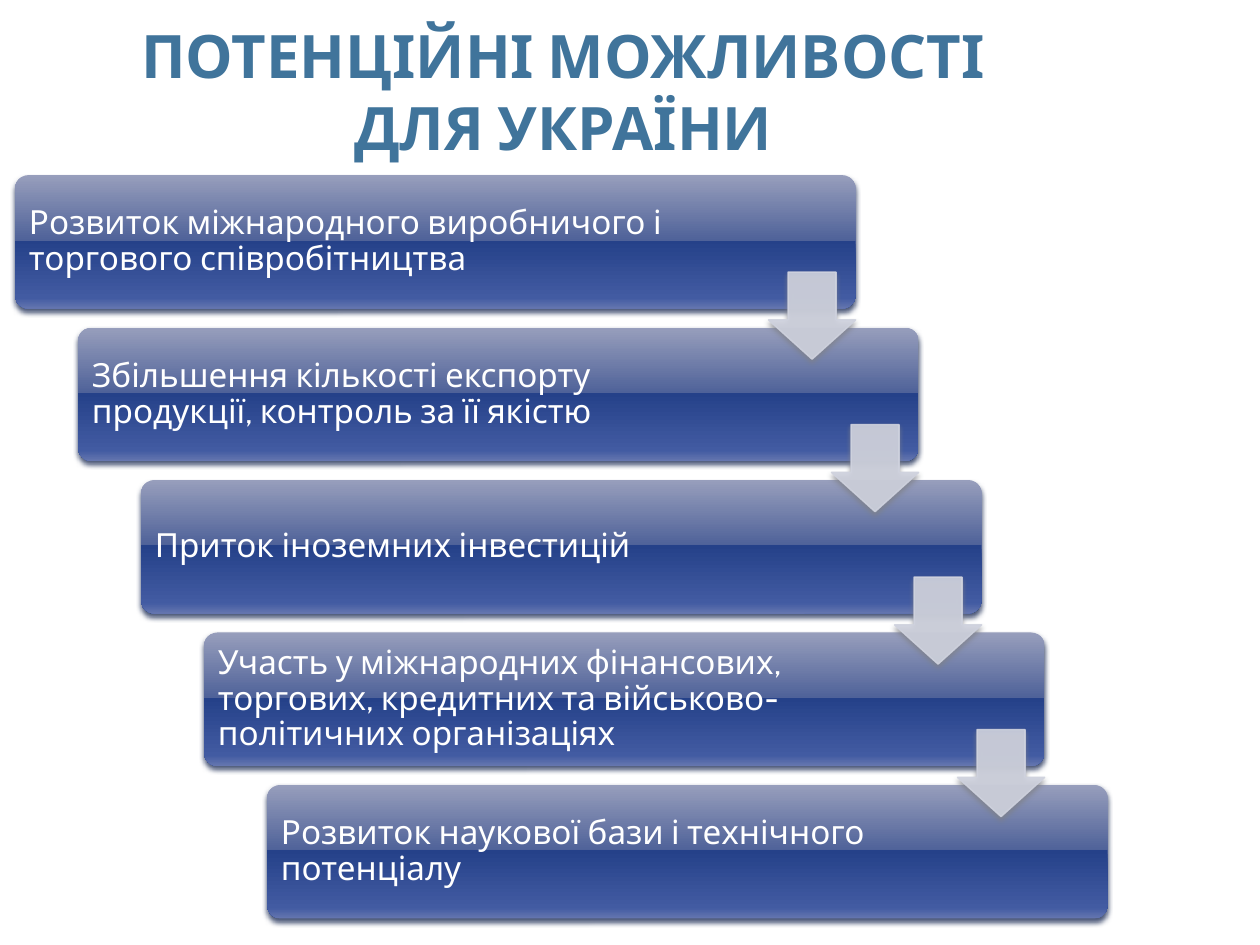
import pptx
import pptx.util
from lxml import etree
from pptx.dml.color import RGBColor
from pptx.enum.shapes import MSO_SHAPE
from pptx.enum.text import MSO_ANCHOR, PP_ALIGN
from pptx.oxml.ns import qn
from pptx.util import Inches

HEADING = "ПОТЕНЦІЙНІ МОЖЛИВОСТІ ДЛЯ УКРАЇНИ"
OPPORTUNITIES = [
    "Розвиток міжнародного виробничого і торгового співробітництва",
    "Збільшення кількості експорту продукції, контроль за її якістю",
    "Приток іноземних інвестицій",
    "Участь у міжнародних фінансових, торгових, кредитних та військово-політичних організаціях",
    "Розвиток наукової бази і технічного потенціалу",
]
GLOSS = [(0, "979EBC"), (49, "4F6299"), (49, "254189"), (92, "425BA2"), (100, "6576AF")]
FONT = "Cabin"
HEADING_COLOR = "40749B"
STEP_TEXT_COLOR = "FFFFFF"
ARROW_COLOR = "CFD2DE"
STEP_SHADOW = "2B3A60"
ARROW_SHADOW = "808289"

STEP_LEFT, STEP_TOP = 0.12, 1.39
STEP_WIDTH, STEP_HEIGHT = 6.67, 1.06
SHIFT_X, SHIFT_Y = 0.5, 1.21
TEXT_INSET, TEXT_WIDTH = 0.03, 5.42
ARROW_SIZE = 0.69
ARROW_DROP = 0.77


def rgb(value):
    return RGBColor.from_string(value)


def add_xml(parent, tag, **attributes):
    child = etree.SubElement(parent, qn(tag))
    for key, value in attributes.items():
        child.set(key, str(value))
    return child


def add_shadow(shape, color):
    shape.shadow.inherit = False
    effects = shape._element.spPr.find(qn("a:effectLst"))
    outer = add_xml(effects, "a:outerShdw", blurRad=pptx.util.Pt(3.1),
                    dist=pptx.util.Pt(2), dir=5400000, rotWithShape=0)
    add_xml(add_xml(outer, "a:srgbClr", val=color), "a:alpha", val=83000)


def fill_gloss(shape):
    shape.fill.gradient()
    shape.fill.gradient_angle = 270
    stops = next(shape._element.spPr.iter(qn("a:gsLst")))
    for stop in list(stops):
        stops.remove(stop)
    for position, color in GLOSS:
        add_xml(add_xml(stops, "a:gs", pos=position * 1000), "a:srgbClr", val=color)


def add_text(slide, box, text, size, color, anchor, margins, bold=False):
    frame = slide.shapes.add_textbox(*map(Inches, box)).text_frame
    frame.word_wrap = True
    frame.vertical_anchor = anchor
    frame.margin_left = frame.margin_right = Inches(margins[0])
    frame.margin_top = frame.margin_bottom = Inches(margins[1])
    frame.text = text
    paragraph = frame.paragraphs[0]
    font = paragraph.runs[0].font
    font.name, font.size, font.bold = FONT, pptx.util.Pt(size), bold
    font.color.rgb = rgb(color)
    return paragraph


def add_step(slide, left, top, text):
    step = slide.shapes.add_shape(
        MSO_SHAPE.ROUNDED_RECTANGLE, *map(Inches, (left, top, STEP_WIDTH, STEP_HEIGHT)))
    step.adjustments[0] = 0.1
    fill_gloss(step)
    step.line.fill.background()
    add_shadow(step, STEP_SHADOW)
    box = (left + TEXT_INSET, top + TEXT_INSET, TEXT_WIDTH, STEP_HEIGHT - 2 * TEXT_INSET)
    label = add_text(slide, box, text, 19, STEP_TEXT_COLOR, MSO_ANCHOR.MIDDLE, (0.08, 0.08))
    label.line_spacing = 0.9


def add_arrow(slide, left, top):
    arrow = slide.shapes.add_shape(
        MSO_SHAPE.DOWN_ARROW, *map(Inches, (left, top, ARROW_SIZE, ARROW_SIZE)))
    arrow.adjustments[0] = 0.55
    arrow.adjustments[1] = 0.45
    arrow.fill.solid()
    arrow.fill.fore_color.rgb = rgb(ARROW_COLOR)
    arrow.line.color.rgb = rgb(ARROW_COLOR)
    arrow.line.width = pptx.util.Pt(0.9)
    for color in arrow._element.spPr.iter(qn("a:srgbClr")):
        add_xml(color, "a:alpha", val=90000)
    add_shadow(arrow, ARROW_SHADOW)


def main():
    deck = pptx.Presentation()
    deck.slide_width, deck.slide_height = Inches(10), Inches(7.5)
    slide = deck.slides.add_slide(deck.slide_layouts[6])
    heading = add_text(slide, (0.51, 0.04, 7.92, 1.25), HEADING, 34.2,
                       HEADING_COLOR, MSO_ANCHOR.BOTTOM, (0.05, 0), bold=True)
    heading.alignment = PP_ALIGN.CENTER

    corners = [(STEP_LEFT + i * SHIFT_X, STEP_TOP + i * SHIFT_Y)
               for i in range(len(OPPORTUNITIES))]
    for (left, top), text in zip(corners, OPPORTUNITIES):
        add_step(slide, left, top, text)
    for left, top in corners[:-1]:
        add_arrow(slide, left + STEP_WIDTH - ARROW_SIZE, top + ARROW_DROP)
    deck.save("out.pptx")


if __name__ == "__main__":
    main()
